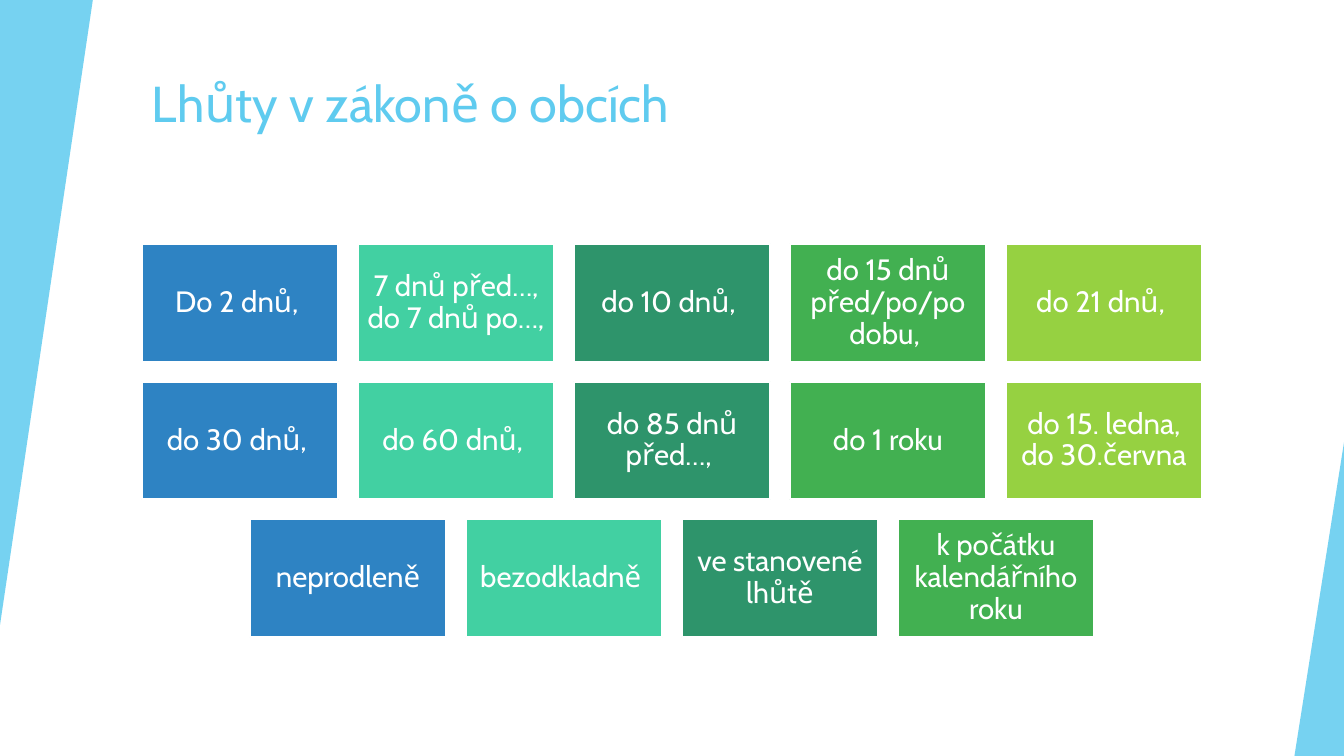
from dataclasses import dataclass

import pptx
import pptx.dml.color
import pptx.enum.shapes
import pptx.enum.text
import pptx.oxml.ns
import pptx.slide
import pptx.util
from lxml import etree

Pt = pptx.util.Pt
RGBColor = pptx.dml.color.RGBColor

SKY = RGBColor(0x5F, 0xCB, 0xEF)
WHITE = RGBColor(0xFF, 0xFF, 0xFF)
BLUE = RGBColor(0x2E, 0x83, 0xC3)
MINT = RGBColor(0x42, 0xD0, 0xA2)
TEAL = RGBColor(0x2E, 0x94, 0x6B)
GREEN = RGBColor(0x42, 0xB0, 0x51)
LIME = RGBColor(0x96, 0xD1, 0x41)
COLUMN_COLORS = (BLUE, MINT, TEAL, GREEN, LIME)

FONT = "Cabin"
SLIDE_W, SLIDE_H = 960, 540
TILE_W, TILE_H = 140.4, 84.2
PITCH_X, PITCH_Y = 154.25, 98.3
GRID_TOP = 174.3

DEADLINES = (
    ("Do 2 dnů, ", "7 dnů před…, do 7 dnů po…, ", "do 10 dnů, ",
     "do 15 dnů před/po/po dobu, ", "do 21 dnů, "),
    ("do 30 dnů, ", "do 60 dnů, ", "do 85 dnů před…, ", "do 1 roku",
     "do 15. ledna, do 30.června"),
    ("neprodleně", "bezodkladně ", "ve stanovené lhůtě",
     "k počátku kalendářního roku"),
)


@dataclass
class Wedge:
    left: float
    top: float
    width: float
    height: float
    rotation: float


@dataclass
class Tile:
    text: str
    left: float
    top: float
    color: RGBColor


WEDGES = (
    Wedge(0, 0, 66.3, 446.4, 180),
    Wedge(924.6, 316, 35.4, 224, 0),
)


def layout_tiles() -> list[Tile]:
    tiles = []
    for row, texts in enumerate(DEADLINES):
        row_w = (len(texts) - 1) * PITCH_X + TILE_W
        left = (SLIDE_W - row_w) / 2
        for col, text in enumerate(texts):
            tiles.append(Tile(text, left + col * PITCH_X,
                              GRID_TOP + row * PITCH_Y, COLUMN_COLORS[col]))
    return tiles


def add_wedge(s: pptx.slide.Slide, wedge: Wedge) -> None:
    sp = s.shapes.add_shape(
        pptx.enum.shapes.MSO_SHAPE.ISOSCELES_TRIANGLE,
        Pt(wedge.left), Pt(wedge.top), Pt(wedge.width), Pt(wedge.height))
    sp.adjustments[0] = 1
    sp.rotation = wedge.rotation
    sp.shadow.inherit = False
    sp.line.fill.background()
    sp.fill.solid()
    sp.fill.fore_color.rgb = SKY
    qn = pptx.oxml.ns.qn
    color = sp.fill._xPr.find(qn("a:solidFill")).find(qn("a:srgbClr"))
    etree.SubElement(color, qn("a:alpha"), val="85000")


def add_title(s: pptx.slide.Slide, text: str) -> None:
    sp = s.shapes.add_textbox(Pt(101.5), Pt(48), Pt(803), Pt(86.4))
    tf = sp.text_frame
    tf.word_wrap = True
    tf.text = text
    r = tf.paragraphs[0].runs[0]
    r.font.name = FONT
    r.font.size = Pt(36)
    r.font.color.rgb = SKY


def add_tile(s: pptx.slide.Slide, tile: Tile) -> None:
    sp = s.shapes.add_shape(
        pptx.enum.shapes.MSO_SHAPE.RECTANGLE,
        Pt(tile.left), Pt(tile.top), Pt(TILE_W), Pt(TILE_H))
    sp.shadow.inherit = False
    sp.fill.solid()
    sp.fill.fore_color.rgb = tile.color
    sp.line.color.rgb = WHITE
    sp.line.width = Pt(1.5)
    tf = sp.text_frame
    tf.word_wrap = True
    tf.vertical_anchor = pptx.enum.text.MSO_ANCHOR.MIDDLE
    tf.margin_left = tf.margin_right = Pt(6.3)
    tf.margin_top = tf.margin_bottom = Pt(6.3)
    tf.text = tile.text
    p = tf.paragraphs[0]
    p.alignment = pptx.enum.text.PP_ALIGN.CENTER
    p.line_spacing = 0.9
    r = p.runs[0]
    r.font.name = FONT
    r.font.size = Pt(21)
    r.font.color.rgb = WHITE


def main() -> None:
    prs = pptx.Presentation()
    prs.slide_width = Pt(SLIDE_W)
    prs.slide_height = Pt(SLIDE_H)
    s = prs.slides.add_slide(prs.slide_layouts[6])
    add_title(s, "Lhůty v zákoně o obcích")
    for wedge in WEDGES:
        add_wedge(s, wedge)
    for tile in layout_tiles():
        add_tile(s, tile)
    prs.save("out.pptx")


if __name__ == "__main__":
    main()
